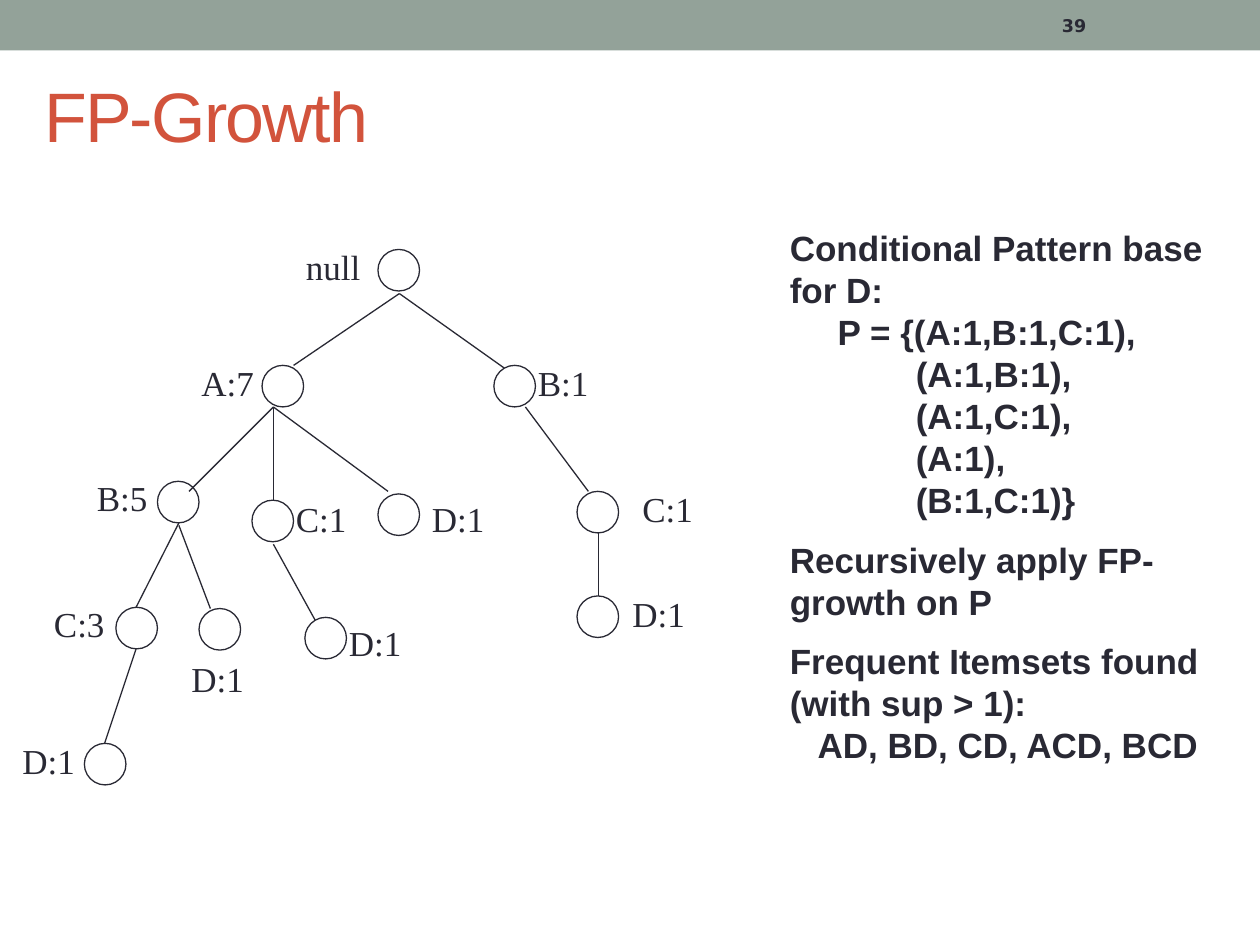
from collections import namedtuple
from dataclasses import dataclass

from lxml.etree import SubElement
from pptx import Presentation
from pptx.dml.color import RGBColor as Rgb
from pptx.enum.shapes import MSO_CONNECTOR as Link, MSO_SHAPE as Form
from pptx.enum.text import MSO_ANCHOR as Anchor, MSO_AUTO_SIZE as Fit, PP_ALIGN as Align
from pptx.oxml.ns import qn
from pptx.util import Inches, Pt

Box = namedtuple("Box", "x y w h")
Node = namedtuple("Node", "text x y tag_x tag_y")


@dataclass(frozen=True)
class Theme:
    """Colours, fonts and sizes of the slide."""
    ink: Rgb = Rgb(0x29, 0x29, 0x34)
    head: Rgb = Rgb(0xD2, 0x53, 0x3C)
    band: Rgb = Rgb(0x93, 0xA2, 0x99)
    sans: str = "Arial"
    serif: str = "Times New Roman"
    mono: str = "DejaVu Sans"
    title: Pt = Pt(40)
    body: Pt = Pt(20)
    small: Pt = Pt(10)
    pitch: Pt = Pt(24)
    gap: Pt = Pt(10)
    line: Pt = Pt(0.75)


THEME = Theme()
DOT = 0.33
NODES = [
    Node("null", 3, 0.08, 2.33, 0),
    Node("A:7", 2.08, 1, 1.5, 0.92),
    Node("B:1", 3.92, 1, 4.17, 0.92),
    Node("B:5", 1.25, 1.92, 0.67, 1.83),
    Node("C:1", 2, 2.07, 2.25, 2),
    Node("D:1", 3, 2.02, 3.33, 2),
    Node("C:1", 4.58, 2, 5, 1.92),
    Node("C:3", 0.92, 2.92, 0.33, 2.83),
    Node("D:1", 1.58, 2.93, 1.42, 3.27),
    Node("D:1", 2.42, 3, 2.67, 2.98),
    Node("D:1", 4.58, 2.83, 4.92, 2.75),
    Node("D:1", 0.67, 4, 0.08, 3.92),
]
EDGES = [
    (3.17, 0.43, 2.33, 1), (3.17, 0.43, 4, 1.02),
    (2.17, 1.33, 1.5, 2), (2.17, 1.33, 2.17, 2.08), (2.17, 1.33, 3.08, 2),
    (4.17, 1.33, 4.67, 2), (4.75, 2.33, 4.75, 2.83),
    (1.42, 2.25, 1.08, 2.92), (1.42, 2.27, 1.67, 2.93),
    (2.17, 2.42, 2.5, 3.02), (1.08, 3.25, 0.83, 4),
]
NOTES = [
    ("Conditional Pattern base for D:", 0, True),
    ("P = {(A:1,B:1,C:1),", 0.38, False),
    ("(A:1,B:1),", 1, False),
    ("(A:1,C:1),", 1, False),
    ("(A:1),", 1, False),
    ("(B:1,C:1)}", 1, False),
    ("Recursively apply FP-growth on P", 0, True),
    ("Frequent Itemsets found (with sup > 1):", 0, True),
    ("AD, BD, CD, ACD, BCD", 0.22, False),
]


def place(box):
    """Turn a box in inches into lengths."""
    return [Inches(v) for v in box]


def style(para, face, size, color=THEME.ink, bold=False):
    """Set the font of a paragraph."""
    font = para.font
    font.name, font.size, font.bold = face, size, bold
    font.color.rgb = color


def add_frame(slide, box, anchor=Anchor.TOP):
    """Add a wrapping text box and return its frame."""
    frame = slide.shapes.add_textbox(*place(box)).text_frame
    frame.word_wrap = True
    frame.vertical_anchor = anchor
    return frame


def add_band(slide, box):
    """Draw the top band with the page number."""
    band = slide.shapes.add_shape(Form.RECTANGLE, *place(box))
    band.shadow.inherit = False
    band.fill.solid()
    band.fill.fore_color.rgb = THEME.band
    band.line.fill.background()
    spot = Box(box.x + 8.33, box.y + 0.02, 1.17, box.h - 0.04)
    para = add_frame(slide, spot, Anchor.MIDDLE).paragraphs[0]
    para.text = "39"
    style(para, THEME.mono, THEME.small, bold=True)


def add_title(slide, box):
    """Move and format the title placeholder."""
    title = slide.shapes.title
    title.left, title.top, title.width, title.height = place(box)
    frame = title.text_frame
    frame.text = "FP-Growth"
    frame.vertical_anchor = Anchor.MIDDLE
    frame.auto_size = Fit.NONE
    para = frame.paragraphs[0]
    para.alignment = Align.LEFT
    style(para, THEME.sans, THEME.title, THEME.head)
    para.runs[0].font._element.set("spc", "-100")


def add_edge(slide, ends):
    """Draw one branch of the tree."""
    edge = slide.shapes.add_connector(Link.STRAIGHT, *place(ends))
    edge.line.color.rgb = THEME.ink
    edge.line.width = THEME.line
    SubElement(edge._element.spPr, qn("a:effectLst"))


def add_node(slide, box, node):
    """Draw one tree node and its label."""
    spot = Box(box.x + node.x, box.y + node.y, DOT, DOT)
    dot = slide.shapes.add_shape(Form.OVAL, *place(spot))
    dot.shadow.inherit = False
    dot.fill.background()
    dot.line.color.rgb = THEME.ink
    dot.line.width = THEME.line
    tag = Box(box.x + node.tag_x, box.y + node.tag_y, 0.67, 0.43)
    para = add_frame(slide, tag).paragraphs[0]
    para.text = node.text
    style(para, THEME.serif, THEME.body)


def add_tree(slide, box):
    """Draw the whole tree inside its box."""
    for x1, y1, x2, y2 in EDGES:
        add_edge(slide, (box.x + x1, box.y + y1, box.x + x2, box.y + y2))
    for node in NODES:
        add_node(slide, box, node)


def add_notes(slide, box):
    """Write the steps beside the tree."""
    frame = add_frame(slide, box)
    for i, (text, indent, first) in enumerate(NOTES):
        para = frame.add_paragraph() if i else frame.paragraphs[0]
        para.text = text
        para.line_spacing = THEME.pitch
        para.space_before = THEME.gap if first and i else Pt(0)
        para._p.get_or_add_pPr().set("marL", str(Inches(indent)))
        style(para, THEME.sans, THEME.body, bold=True)


def main():
    """Build and save the slide."""
    deck = Presentation()
    deck.slide_width, deck.slide_height = Inches(10), Inches(7.5)
    slide = deck.slides.add_slide(deck.slide_layouts[5])
    add_band(slide, Box(0, 0, 10, 0.4))
    add_title(slide, Box(0.25, 0.28, 9, 1.25))
    add_tree(slide, Box(0, 1.9, 5.67, 4.35))
    add_notes(slide, Box(6.17, 1.75, 3.67, 4.43))
    deck.save("out.pptx")


if __name__ == "__main__":
    main()
